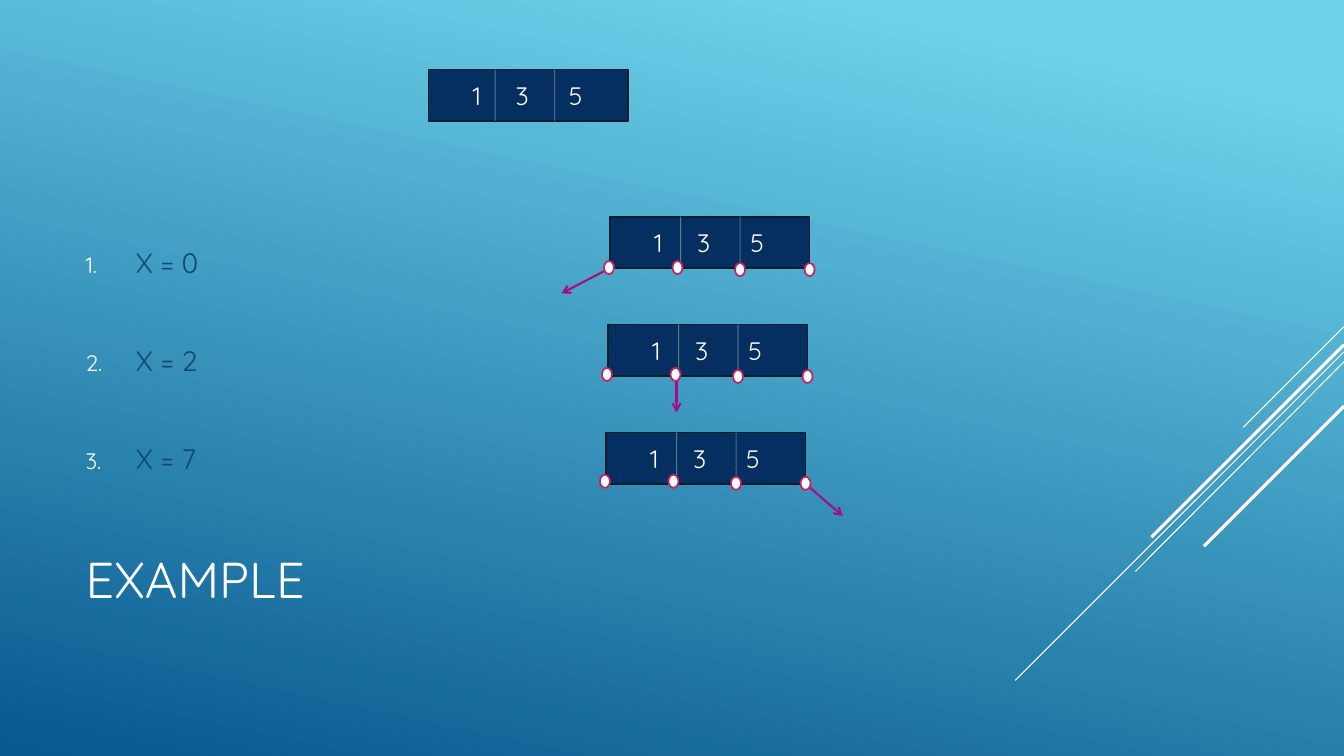
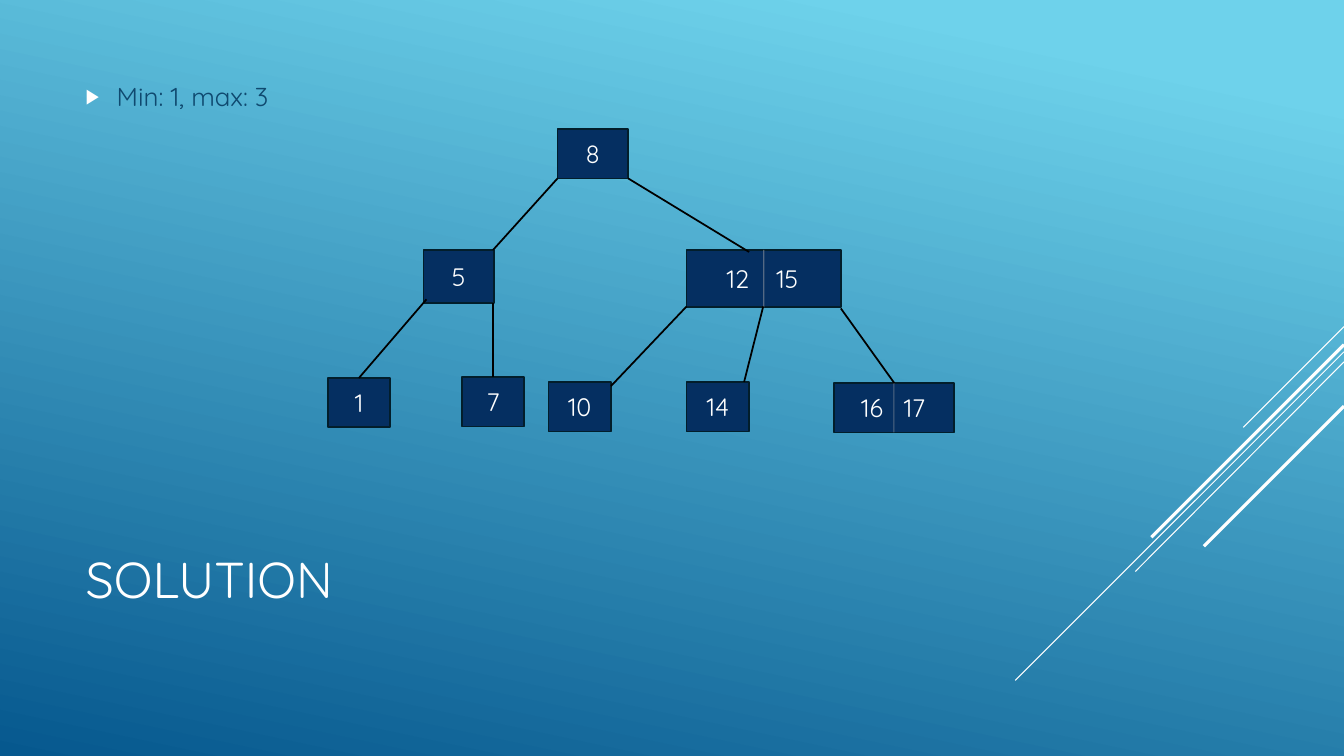
from lxml import etree
from pptx import Presentation
from pptx.dml.color import RGBColor
from pptx.enum.shapes import MSO_CONNECTOR, MSO_SHAPE
from pptx.enum.text import MSO_ANCHOR, PP_ALIGN
from pptx.oxml.ns import qn
from pptx.util import Inches, Pt

# Shared style
FONT = "Quicksand"
WHITE, BODY = "FFFFFF", "0F496F"
SKY, DEEP = "6ED2EB", "06588E"
NAVY, NAVY_EDGE = "052F61", "021E2B"
SAGE, GREY, BLACK = "8AB7A1", "89919C", "000000"
ARROW, DOT_EDGE = "A50E82", "C6235F"
STRIPES = [  # start y at the right edge, end x, end y, weight
    (3.24, 12.33, 4.24, 0.75), (3.49, 10.07, 6.75, 0.75),
    (3.59, 11.26, 5.67, 0.75), (3.42, 11.42, 5.33, 2.25),
    (4.03, 11.94, 5.42, 2.25),
]


def rgb(hex_text):
    return RGBColor.from_string(hex_text)


def child(parent, tag, **attributes):
    return etree.SubElement(parent, qn(tag), attributes)


def add_run(paragraph, text, size, color):
    run = paragraph.add_run()
    run.text = text
    run.font.name = FONT
    run.font.size = Pt(size)
    run.font.color.rgb = rgb(color)


def add_line(slide, start, end, color, weight, alpha=None, arrow=False):
    line = slide.shapes.add_connector(
        MSO_CONNECTOR.STRAIGHT, *(Inches(v) for v in (*start, *end)))
    line.line.color.rgb = rgb(color)
    line.line.width = Pt(weight)
    outline = line.line._get_or_add_ln()
    if alpha:
        child(outline.find(".//" + qn("a:srgbClr")), "a:alpha", val=str(alpha * 1000))
    if arrow:
        child(outline, "a:tailEnd", type="arrow")
    child(line._element.spPr, "a:effectLst")


def add_outlined(slide, preset, left, top, width, height, fill, edge):
    shape = slide.shapes.add_shape(
        preset, *(Inches(v) for v in (left, top, width, height)))
    shape.shadow.inherit = False
    shape.fill.solid()
    shape.fill.fore_color.rgb = rgb(fill)
    shape.line.color.rgb = rgb(edge)
    shape.line.width = Pt(1.25)
    return shape


def add_node(slide, left, top, width, height, keys, key_centres=(), dividers=()):
    """Tree node; several keys are placed on centred tab stops."""
    node = add_outlined(slide, MSO_SHAPE.RECTANGLE, left, top, width, height,
                        NAVY, NAVY_EDGE)
    frame = node.text_frame
    frame.margin_left = frame.margin_right = 0
    frame.vertical_anchor = MSO_ANCHOR.MIDDLE
    paragraph = frame.paragraphs[0]
    text = keys[0]
    if len(keys) == 1:
        paragraph.alignment = PP_ALIGN.CENTER
    else:
        paragraph.alignment = PP_ALIGN.LEFT
        tabs = child(paragraph._p.get_or_add_pPr(), "a:tabLst")
        for centre in key_centres:
            child(tabs, "a:tab", pos=str(Inches(centre)), algn="ctr")
        text = "".join("\t" + key for key in keys)
    add_run(paragraph, text, 18, WHITE)
    for offset, color in dividers:
        x = left + offset
        add_line(slide, (x, top), (x, top + height), color, 0.75, alpha=60)


def add_body(slide, top, height, items, size, indent, bullet, line_spacing=1.0):
    """Bulleted text; bullet is a tag with its attributes."""
    box = slide.shapes.add_textbox(
        Inches(0.75), Inches(top), Inches(9.33), Inches(height))
    frame = box.text_frame
    frame.word_wrap = True
    frame.vertical_anchor = MSO_ANCHOR.MIDDLE
    tag, attributes = bullet
    for index, item in enumerate(items):
        paragraph = frame.add_paragraph() if index else frame.paragraphs[0]
        props = paragraph._p.get_or_add_pPr()
        props.set("marL", str(Inches(indent)))
        props.set("indent", str(-Inches(indent)))
        child(child(props, "a:buClr"), "a:srgbClr", val=WHITE)
        child(props, "a:buSzPct", val="80000")
        child(props, "a:buFont", typeface=FONT)
        child(props, tag, **attributes)
        paragraph.line_spacing = line_spacing
        paragraph.space_before = Pt(size * 0.2 if index else 0)
        paragraph.space_after = Pt(6)
        add_run(paragraph, item, size, BODY)


def set_background(master):
    fill = master.background.fill
    fill.gradient()
    fill.gradient_angle = 258
    for stop, color, position in zip(fill.gradient_stops, (SKY, DEEP), (0.1, 1)):
        stop.color.rgb = rgb(color)
        stop.position = position


def start_slide(prs, heading):
    slide = prs.slides.add_slide(prs.slide_layouts[5])
    for start_y, end_x, end_y, weight in STRIPES:
        add_line(slide, (13.33, start_y), (end_x, end_y), WHITE, weight)
    title = slide.shapes.title
    title.left, title.top = Inches(0.75), Inches(4.91)
    title.width, title.height = Inches(9.33), Inches(1.65)
    title.text_frame.vertical_anchor = MSO_ANCHOR.MIDDLE
    paragraph = title.text_frame.paragraphs[0]
    paragraph.alignment = PP_ALIGN.LEFT
    add_run(paragraph, heading, 36, WHITE)
    return slide


def add_key_row(slide, left, top, first_divider):
    add_node(slide, left, top, 1.98, 0.51, ("1", "3", "5"), (0.48, 0.93, 1.46),
             ((first_divider, SAGE), (first_divider + 0.59, GREY)))


def build_example(prs):
    slide = start_slide(prs, "EXAMPLE")
    add_body(slide, 1.94, 2.76, ("X = 0", "X = 2", "X = 7"), 20, 0.5,
             ("a:buAutoNum", {"type": "arabicPeriod"}), line_spacing=2.5)

    # The node alone, then once per searched value
    add_key_row(slide, 4.25, 0.69, 0.66)
    for row in range(3):
        add_key_row(slide, 6.05 - 0.02 * row, 2.15 + 1.07 * row, 0.7)

    # Branch followed by each search
    for start, end in (((6.05, 2.66), (5.57, 2.91)),
                       ((6.71, 3.73), (6.71, 4.09)),
                       ((7.99, 4.8), (8.36, 5.12))):
        add_line(slide, start, end, ARROW, 1.5, arrow=True)

    # Child pointers
    for row in range(3):
        for dx, dy in ((0, 0), (0.68, 0), (1.3, 0.02), (1.99, 0.02)):
            add_outlined(slide, MSO_SHAPE.OVAL, 5.99 - 0.02 * row + dx,
                         2.59 + 1.06 * row + dy, 0.1, 0.13, WHITE, DOT_EDGE)


def build_solution(prs):
    slide = start_slide(prs, "SOLUTION")
    add_body(slide, 0.75, 0.4, ("Min: 1, max: 3",), 18.5, 0.31,
             ("a:buChar", {"char": "▶"}))

    # Nodes with one key
    for key, left, top, width, height in (
            ("8", 5.53, 1.28, 0.7, 0.49), ("5", 4.2, 2.48, 0.7, 0.53),
            ("1", 3.25, 3.75, 0.62, 0.49), ("7", 4.58, 3.74, 0.62, 0.49),
            ("10", 5.44, 3.79, 0.62, 0.49), ("14", 6.81, 3.79, 0.62, 0.49)):
        add_node(slide, left, top, width, height, (key,))

    # Nodes with two keys, divided in the middle
    for keys, left, top, width, height, centres in (
            (("12", "15"), 6.81, 2.48, 1.53, 0.57, (0.51, 1.0)),
            (("16", "17"), 8.27, 3.8, 1.19, 0.49, (0.38, 0.8))):
        add_node(slide, left, top, width, height, keys, centres,
                 ((width / 2, GREY),))

    # Branches
    for start, end in (((5.53, 1.77), (4.89, 2.48)), ((6.23, 1.77), (7.43, 2.5)),
                       ((4.23, 2.97), (3.56, 3.75)), ((4.89, 3.01), (4.89, 3.74)),
                       ((6.81, 3.04), (6.06, 3.83)), ((7.57, 3.04), (7.38, 3.79)),
                       ((8.34, 3.06), (8.87, 3.8))):
        add_line(slide, start, end, BLACK, 1.25)


def main():
    prs = Presentation()
    prs.slide_width, prs.slide_height = Inches(13.33), Inches(7.5)
    set_background(prs.slide_master)
    build_example(prs)
    build_solution(prs)
    prs.save("out.pptx")


if __name__ == "__main__":
    main()
